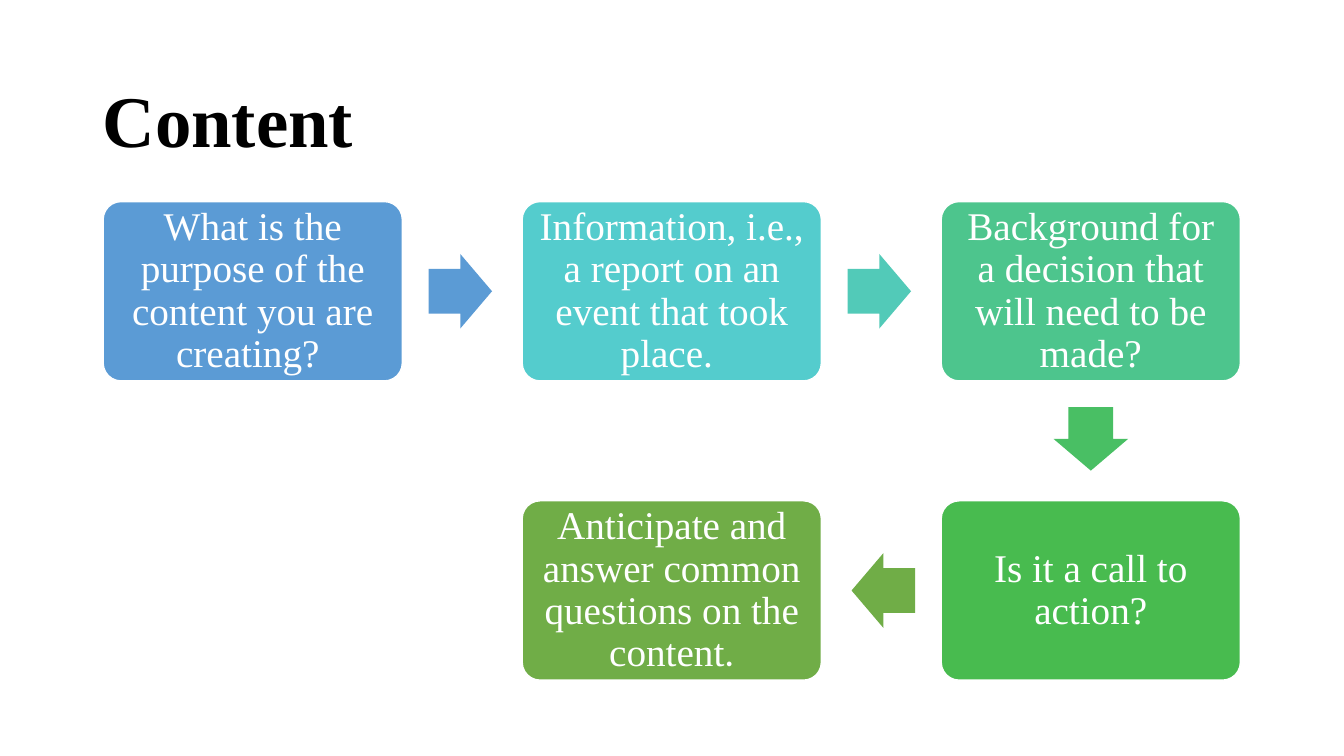
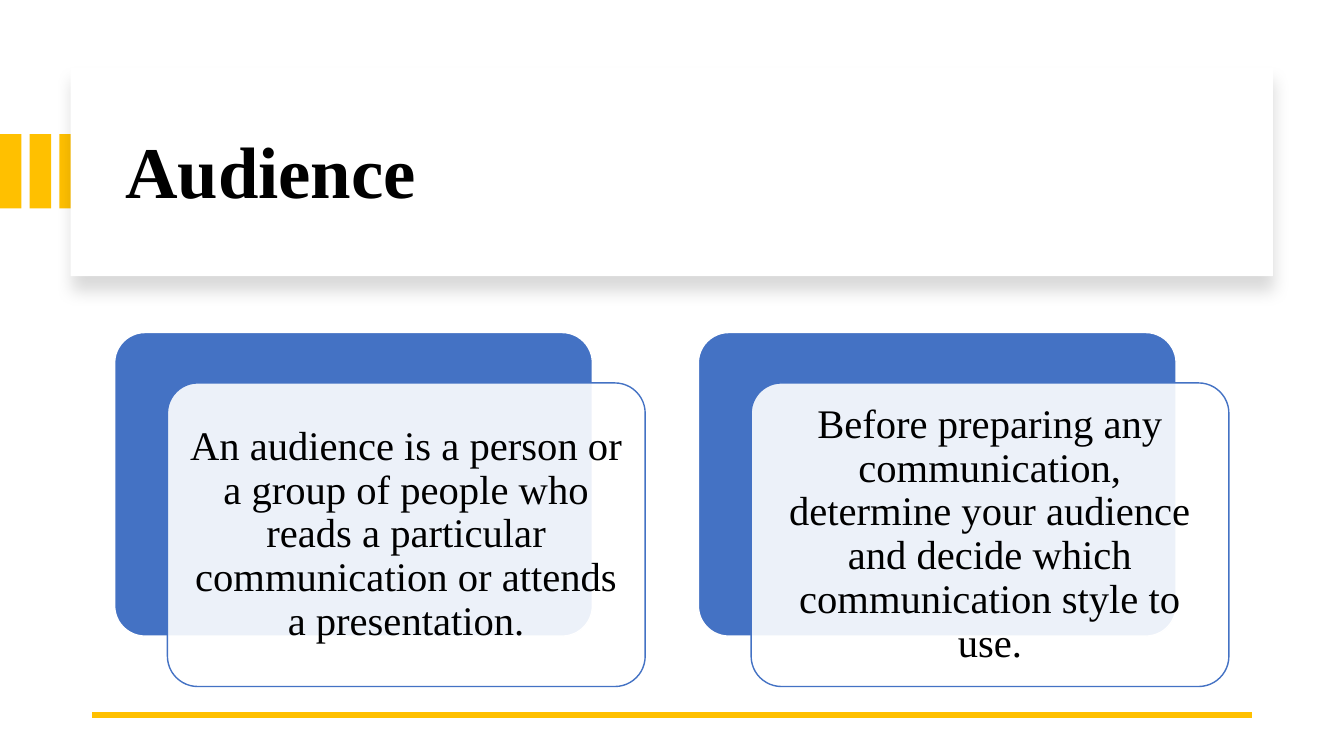
"""Build two training slides: a content flow and an audience summary."""
from math import atan2, cos, degrees, sin

from lxml import etree
from pptx import Presentation
from pptx.dml.color import RGBColor
from pptx.enum.shapes import MSO_CONNECTOR, MSO_SHAPE
from pptx.enum.text import MSO_ANCHOR, MSO_AUTO_SIZE, PP_ALIGN
from pptx.oxml.ns import qn
from pptx.util import Cm, Pt

RECT, ROUNDED = MSO_SHAPE.RECTANGLE, MSO_SHAPE.ROUNDED_RECTANGLE
ARROW, STRAIGHT = MSO_SHAPE.RIGHT_ARROW, MSO_CONNECTOR.STRAIGHT
MIDDLE, NO_FIT = MSO_ANCHOR.MIDDLE, MSO_AUTO_SIZE.NONE
LEFT, CENTER = PP_ALIGN.LEFT, PP_ALIGN.CENTER

WHITE = RGBColor(0xFF, 0xFF, 0xFF)
BLACK = RGBColor(0x00, 0x00, 0x00)
GOLD = RGBColor(0xFF, 0xC0, 0x00)
ROYAL = RGBColor(0x44, 0x72, 0xC4)
BLUE = RGBColor(0x5B, 0x9B, 0xD5)
CYAN = RGBColor(0x54, 0xCC, 0xCD)
TEAL = RGBColor(0x52, 0xCA, 0xB8)
MINT = RGBColor(0x4D, 0xC5, 0x8D)
EMERALD = RGBColor(0x49, 0xBF, 0x64)
GREEN = RGBColor(0x48, 0xBB, 0x4F)
OLIVE = RGBColor(0x70, 0xAD, 0x47)

SERIF, SANS = "Times New Roman", "Calibri"
TITLE_FONT = {"name": SERIF, "size": Pt(52), "bold": True}
STEP_FONT = {"name": SERIF, "size": Pt(28)}
CARD_FONT = {"name": SERIF, "size": Pt(29)}
MARGINS = ("margin_left", "margin_right", "margin_top", "margin_bottom")
TITLE_FRAME = {"vertical_anchor": MIDDLE, "auto_size": NO_FIT, "word_wrap": True}
STEP_FRAME = {**TITLE_FRAME, **dict.fromkeys(MARGINS, Cm(0.29))}
CARD_FRAME = {**TITLE_FRAME, **dict.fromkeys(MARGINS, Cm(0.33))}

STEPS = [
    ((0, 0), BLUE, [("What is the purpose of the content you are creating? ", SERIF)]),
    ((1, 0), CYAN, [("Information, i.e., a report on an event that took place. ", SERIF)]),
    ((2, 0), MINT, [("Background for a decision that will need to be made?", SERIF)]),
    ((2, 1), GREEN, [("Is it a call to action?", SERIF)]),
    ((1, 1), OLIVE, [("Anticipate and answer common questions on the content", SERIF),
                     (".", SANS)]),
]
ARROW_COLORS = [BLUE, TEAL, EMERALD, OLIVE]
STEP_ORIGIN, STEP_PITCH, STEP_SIZE = (2.6, 5.08), (10.56, 7.54), (7.54, 4.52)
ARROW_SIZE, ARROW_SHIFT = (1.6, 1.88), 0.05

CARDS = [
    "An audience is a person or a group of people who reads a particular "
    "communication or attends a presentation.",
    "Before preparing any communication, determine your audience and decide "
    "which communication style to use.",
]
CARD_ORIGIN, CARD_PITCH, CARD_SIZE = (2.89, 8.38), 14.71, (12.04, 7.65)
CARD_OFFSET = (1.33, 1.27)
STRIPE_COUNT, STRIPE_PITCH = 3, 0.75


def apply(target, formats):
    for name, value in formats.items():
        setattr(target, name, value)


def write(frame, runs, frame_format, font_format, color, align):
    apply(frame, frame_format)
    paragraph = frame.paragraphs[0]
    apply(paragraph, {"alignment": align, "line_spacing": 0.9})
    for words, face in runs:
        run = paragraph.add_run()
        run.text = words
        apply(run.font, {**font_format, "name": face})
        run.font.color.rgb = color


def add_block(slide, kind, box, fill, line=None):
    block = slide.shapes.add_shape(kind, *map(Cm, box))
    block.shadow.inherit = False
    block.fill.solid()
    block.fill.fore_color.rgb = fill
    if line is None:
        block.line.fill.background()
    else:
        block.line.color.rgb = line
        block.line.width = Pt(1)
    return block


def add_rounded(slide, box, fill, line):
    rounded = add_block(slide, ROUNDED, box, fill, line)
    rounded.adjustments[0] = 0.1
    return rounded


def add_alpha(parent, percent):
    color = next(parent.iter(qn("a:srgbClr")))
    etree.SubElement(color, qn("a:alpha"), val=str(percent * 1000))


def set_title(slide, words, box):
    title = slide.shapes.title
    apply(title, dict(zip(("left", "top", "width", "height"), map(Cm, box))))
    write(title.text_frame, [(words, SERIF)], TITLE_FRAME, TITLE_FONT, BLACK, LEFT)
    title.element.getparent().append(title.element)


def step_center(cell):
    return [start + index * pitch + size / 2 for start, index, pitch, size
            in zip(STEP_ORIGIN, cell, STEP_PITCH, STEP_SIZE)]


def centered(center, size):
    return [middle - length / 2 for middle, length in zip(center, size)] + list(size)


def build_content(slide):
    set_title(slide, "Content", (2.33, 1.55, 29.21, 3.15))
    for cell, color, runs in STEPS:
        step = add_rounded(slide, centered(step_center(cell), STEP_SIZE), color, WHITE)
        write(step.text_frame, runs, STEP_FRAME, STEP_FONT, WHITE, CENTER)
    for current, following, color in zip(STEPS, STEPS[1:], ARROW_COLORS):
        (x1, y1), (x2, y2) = step_center(current[0]), step_center(following[0])
        angle = atan2(y2 - y1, x2 - x1)
        middle = ((x1 + x2) / 2 - ARROW_SHIFT * cos(angle),
                  (y1 + y2) / 2 - ARROW_SHIFT * sin(angle))
        arrow = add_block(slide, ARROW, centered(middle, ARROW_SIZE), color)
        arrow.adjustments[0] = 0.6
        arrow.rotation = round(degrees(angle))


def add_panel(slide):
    panel = add_block(slide, RECT, (1.78, 1.7, 30.3, 5.26), WHITE)
    effects = panel.element.spPr.find(qn("a:effectLst"))
    shadow = etree.SubElement(effects, qn("a:outerShdw"), blurRad=str(Pt(11)),
                              dist=str(Pt(10)), dir="5400000", algn="t",
                              rotWithShape="0")
    etree.SubElement(shadow, qn("a:srgbClr"), val=str(BLACK))
    add_alpha(shadow, 15)


def add_rule(slide):
    rule = slide.shapes.add_connector(STRAIGHT, *map(Cm, (31.55, 18.02, 2.33, 18.02)))
    rule.line.color.rgb = GOLD
    rule.line.width = Pt(4.5)
    etree.SubElement(rule.element.spPr, qn("a:effectLst"))


def build_audience(slide):
    for index in range(STRIPE_COUNT):
        add_block(slide, RECT, (index * STRIPE_PITCH, 3.38, 0.54, 1.87), GOLD)
    add_panel(slide)
    set_title(slide, "Audience", (2.9, 2.26, 28.27, 4.32))
    add_rule(slide)
    for index, words in enumerate(CARDS):
        left, top = CARD_ORIGIN[0] + index * CARD_PITCH, CARD_ORIGIN[1]
        add_rounded(slide, (left, top, *CARD_SIZE), ROYAL, WHITE)
        front = (left + CARD_OFFSET[0], top + CARD_OFFSET[1], *CARD_SIZE)
        card = add_rounded(slide, front, WHITE, ROYAL)
        add_alpha(card.element.spPr.find(qn("a:solidFill")), 90)
        write(card.text_frame, [(words, SERIF)], CARD_FRAME, CARD_FONT, BLACK, CENTER)


def main():
    deck = Presentation()
    deck.slide_width, deck.slide_height = Cm(33.87), Cm(19.05)
    for build in (build_content, build_audience):
        build(deck.slides.add_slide(deck.slide_layouts[5]))
    deck.save("out.pptx")


if __name__ == "__main__":
    main()
